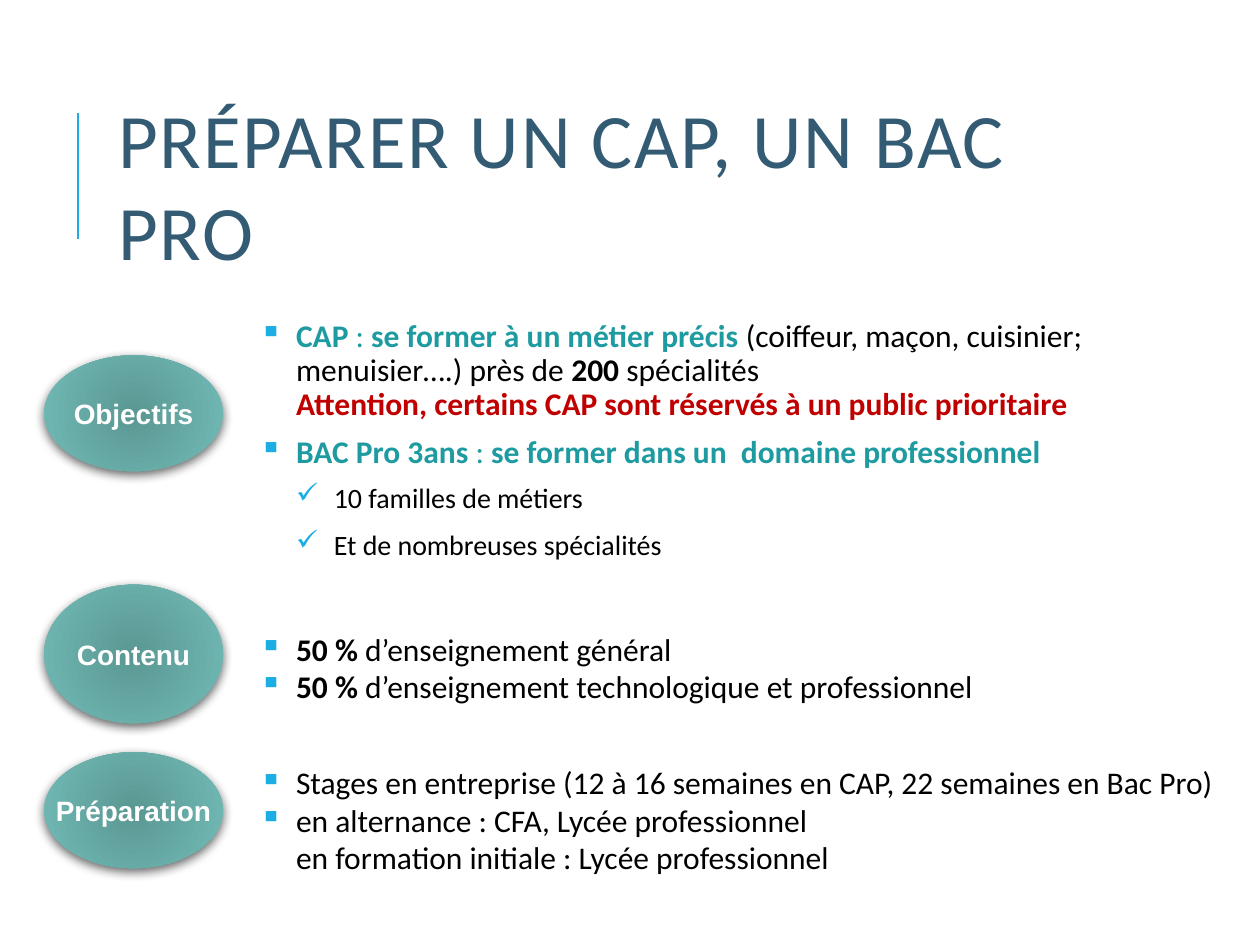
"""Builds the slide that presents the CAP and BAC Pro courses."""
from lxml.etree import SubElement
from pptx import Presentation
from pptx.dml.color import RGBColor as RGB
from pptx.enum.shapes import MSO_CONNECTOR as Connector, MSO_SHAPE as Shape
from pptx.enum.text import MSO_ANCHOR as Anchor, PP_ALIGN as Align
from pptx.oxml.ns import qn
from pptx.util import Inches, Pt

THEME = {
    "title": RGB.from_string("335B74"),
    "accent": RGB.from_string("1CADE4"),
    "course": RGB.from_string("1D9BA1"),
    "warning": RGB.from_string("C00000"),
    "body": RGB.from_string("000000"),
    "label": RGB.from_string("FFFFFF"),
    "gradient": ("5B9894", "72BBB6"),
    "title_size": 44,
    "body_size": 18,
    "detail_size": 16,
    "font": "Calibri",
    "label_font": "Arial",
}


def add_text(paragraph, text, color="body", size="body_size", font="font", bold=False, spacing=0):
    run = paragraph.add_run()
    run.text = text
    run.font.name = THEME[font]
    run.font.size = Pt(THEME[size])
    run.font.color.rgb = THEME[color]
    run.font.bold = bold
    if spacing:
        run.font._element.set("spc", str(spacing * 100))


def add_child(parent, tag, **attributes):
    return SubElement(parent, qn(tag), {name: str(value) for name, value in attributes.items()})


presentation = Presentation()
presentation.slide_width, presentation.slide_height = Inches(10), Inches(7.5)
column, row = presentation.slide_width / 100, presentation.slide_height / 75
slide = presentation.slides.add_slide(presentation.slide_layouts[6])

title_rule = slide.shapes.add_connector(
    Connector.STRAIGHT, int(6.2 * column), int(19 * row), int(6.2 * column), int(9 * row))
title_rule.line.color.rgb = THEME["accent"]
title_rule.line.width = Pt(1.5)
add_child(title_rule._element.spPr, "a:effectLst")

for label, top, height in [("Objectifs", 28.2, 9.2), ("Contenu", 46.4, 11), ("Préparation", 59.7, 9.2)]:
    oval = slide.shapes.add_shape(
        Shape.OVAL, int(3.5 * column), int(top * row), int(14.2 * column), int(height * row))
    oval.line.fill.background()
    oval.fill.gradient()
    for stop, color in zip(oval.fill.gradient_stops, THEME["gradient"]):
        stop.color.rgb = RGB.from_string(color)
    properties = oval._element.spPr
    gradient = properties.find(qn("a:gradFill"))
    gradient.remove(gradient.find(qn("a:lin")))
    circle = add_child(gradient, "a:path", path="circle")
    add_child(circle, "a:fillToRect", l=50000, t=50000, r=50000, b=50000)

    oval.shadow.inherit = False
    shadow = add_child(properties.find(qn("a:effectLst")), "a:outerShdw",
                       blurRad=Pt(6), dist=Pt(2), dir=90 * 60000, rotWithShape=0)
    add_child(add_child(shadow, "a:srgbClr", val="000000"), "a:alpha", val=60000)

    oval.text_frame.word_wrap = False
    oval.text_frame.vertical_anchor = Anchor.MIDDLE
    paragraph = oval.text_frame.paragraphs[0]
    paragraph.alignment = Align.CENTER
    add_text(paragraph, label, color="label", size="detail_size", font="label_font", bold=True)

title = slide.shapes.add_textbox(int(8.4 * column), int(6.4 * row), int(79.7 * column), int(16.4 * row))
title.text_frame.word_wrap = True
title.text_frame.vertical_anchor = Anchor.MIDDLE
add_text(title.text_frame.paragraphs[0], "PRÉPARER UN CAP, UN BAC PRO",
         color="title", size="title_size", spacing=1)

body = slide.shapes.add_textbox(int(20.1 * column), int(24.9 * row), int(78 * column), int(44 * row))
frame = body.text_frame
frame.word_wrap = True
frame.margin_left = frame.margin_right = frame.margin_top = frame.margin_bottom = int(0.5 * column)

course = {"color": "course", "bold": True}
course_light = {"color": "course"}
bold = {"bold": True}
detail = {"size": "detail_size"}
content = [
    ("▪", 0, 0, [("CAP ", course), (": ", course_light), ("se former à un métier précis ", course),
                 ("(coiffeur, maçon, cuisinier; menuisier….) près de ", {}),
                 ("200", bold), (" spécialités", {})]),
    ("", 0, 2, [("Attention, certains CAP sont réservés à un public prioritaire",
                 {"color": "warning", "bold": True})]),
    ("▪", 6, 2, [("BAC Pro 3ans ", course), (": ", course_light),
                 ("se former dans un  domaine professionnel", course)]),
    ("✓", 6, 4, [("10 familles de métiers", detail)]),
    ("✓", 6, 4, [("Et de nombreuses spécialités", detail)]),
    ("▪", 37, 2, [("50 %", bold), (" d’enseignement général", {})]),
    ("▪", 0, 2, [("50 %", bold), (" d’enseignement technologique et professionnel", {})]),
    ("▪", 33.5, 2, [("Stages en entreprise (12 à 16 semaines en CAP, 22 semaines en Bac Pro)", {})]),
    ("▪", 0, 2, [("en alternance : CFA, Lycée professionnel", {})]),
    ("", 0, 2, [("en formation initiale : Lycée professionnel", {})]),
]
for index, (bullet, before, after, runs) in enumerate(content):
    paragraph = frame.add_paragraph() if index else frame.paragraphs[0]
    paragraph.level = int(bullet == "✓")
    paragraph.line_spacing = 0.9
    paragraph.space_before, paragraph.space_after = Pt(before), Pt(after)
    properties = paragraph._p.get_or_add_pPr()
    hanging = 3 if paragraph.level else 2.9
    properties.set("marL", str(int((2.9 + 3 * paragraph.level) * column)))
    properties.set("indent", str(int(-hanging * column) if bullet else 0))
    if bullet:
        add_child(add_child(properties, "a:buClr"), "a:srgbClr", val=THEME["accent"])
        add_child(properties, "a:buChar", char=bullet)
    else:
        add_child(properties, "a:buNone")
    for text, style in runs:
        add_text(paragraph, text, **style)

presentation.save("out.pptx")
